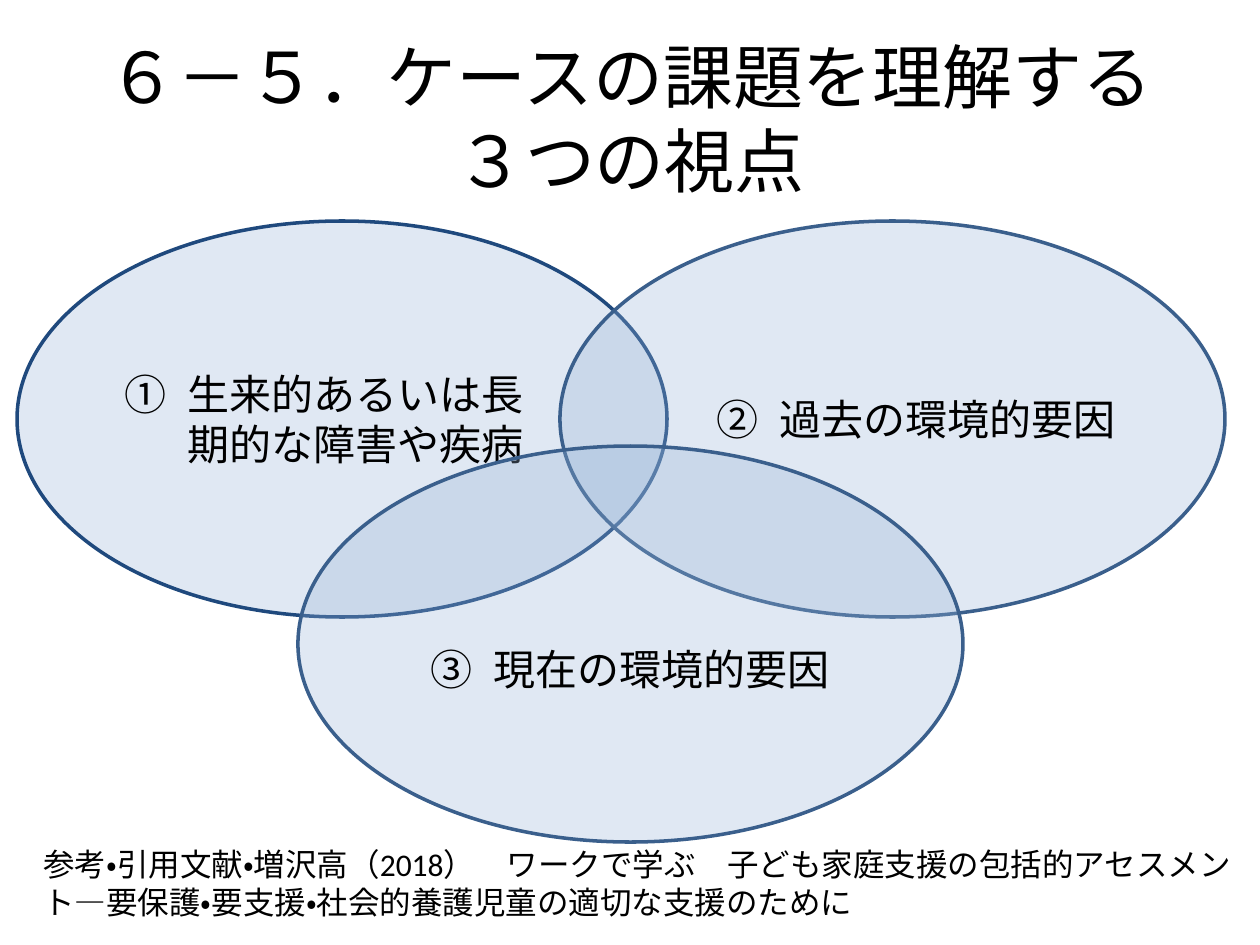
import pptx
import pptx.util
import pptx.dml.color
import pptx.enum.lang
import pptx.enum.shapes
import pptx.enum.text
import pptx.oxml.ns
import lxml.etree

SCALE = 914400 / 126
COLORS = {"text": "000000", "fill": "95B3D7", "navy": "1F497D", "steel": "3A5F8C"}
ALIGN = pptx.enum.text.PP_ALIGN
ANCHOR = pptx.enum.text.MSO_ANCHOR
qn = pptx.oxml.ns.qn


def px(value):
    return pptx.util.Emu(round(value * SCALE))


def write(box, text, size, font="Calibri", align=ALIGN.LEFT, anchor=ANCHOR.TOP, number=None):
    frame = box.text_frame
    frame.word_wrap = True
    frame.vertical_anchor = anchor
    para = frame.paragraphs[0]
    para.text = text
    para.alignment = align
    for span in para.runs:
        span.font.size = pptx.util.Pt(size)
        span.font.name = font
        span.font.language_id = pptx.enum.lang.MSO_LANGUAGE_ID.JAPANESE
        span.font.color.rgb = pptx.dml.color.RGBColor.from_string(COLORS["text"])
        if font != "Calibri":
            latin = span.font._element.find(qn("a:latin"))
            latin.addnext(latin.makeelement(qn("a:ea"), {"typeface": font}))
    if number:
        properties = para._p.get_or_add_pPr()
        properties.set("marL", str(px(63)))
        properties.set("indent", str(-px(63)))
        lxml.etree.SubElement(properties, qn("a:buFont"), typeface="Noto Sans CJK JP")
        lxml.etree.SubElement(properties, qn("a:buAutoNum"), type="circleNumDbPlain", startAt=str(number))


deck = pptx.Presentation()
deck.slide_width = px(1260)
deck.slide_height = px(945)
page = deck.slides.add_slide(deck.slide_layouts[6])

title = page.shapes.add_textbox(px(63), px(38), px(1134), px(158))
write(title, "６－５．ケースの課題を理解する\v３つの視点", 40,
      font="Noto Sans CJK JP", align=ALIGN.CENTER, anchor=ANCHOR.MIDDLE)

factors = [
    ("生来的あるいは長期的な障害や疾病", 17, 221, 650, "navy", ALIGN.LEFT, 6),
    ("過去の環境的要因", 560, 221, 665, "steel", ALIGN.RIGHT, 6),
    ("現在の環境的要因", 298, 446, 665, "steel", ALIGN.CENTER, 56),
]
for number, (text, left, top, width, line, align, inset) in enumerate(factors, 1):
    ellipse = page.shapes.add_shape(
        pptx.enum.shapes.MSO_SHAPE.OVAL, px(left), px(top), px(width), px(396))
    ellipse.shadow.inherit = False
    ellipse.fill.solid()
    ellipse.fill.fore_color.rgb = pptx.dml.color.RGBColor.from_string(COLORS["fill"])
    color = ellipse._element.spPr.find(qn("a:solidFill"))[0]
    lxml.etree.SubElement(color, qn("a:alpha"), val="29000")
    ellipse.line.color.rgb = pptx.dml.color.RGBColor.from_string(COLORS[line])
    ellipse.line.width = pptx.util.Pt(2)
    ellipse.text_frame.margin_top = px(inset)
    write(ellipse, text, 24, align=align, anchor=ANCHOR.MIDDLE, number=number)

reference = page.shapes.add_textbox(px(31), px(839), px(1213), px(89))
write(reference, "参考・引用文献・増沢高（2018）　ワークで学ぶ　子ども家庭支援の包括的アセスメント―要保護・要支援・社会的養護児童の適切な支援のために", 18)

deck.save("out.pptx")
